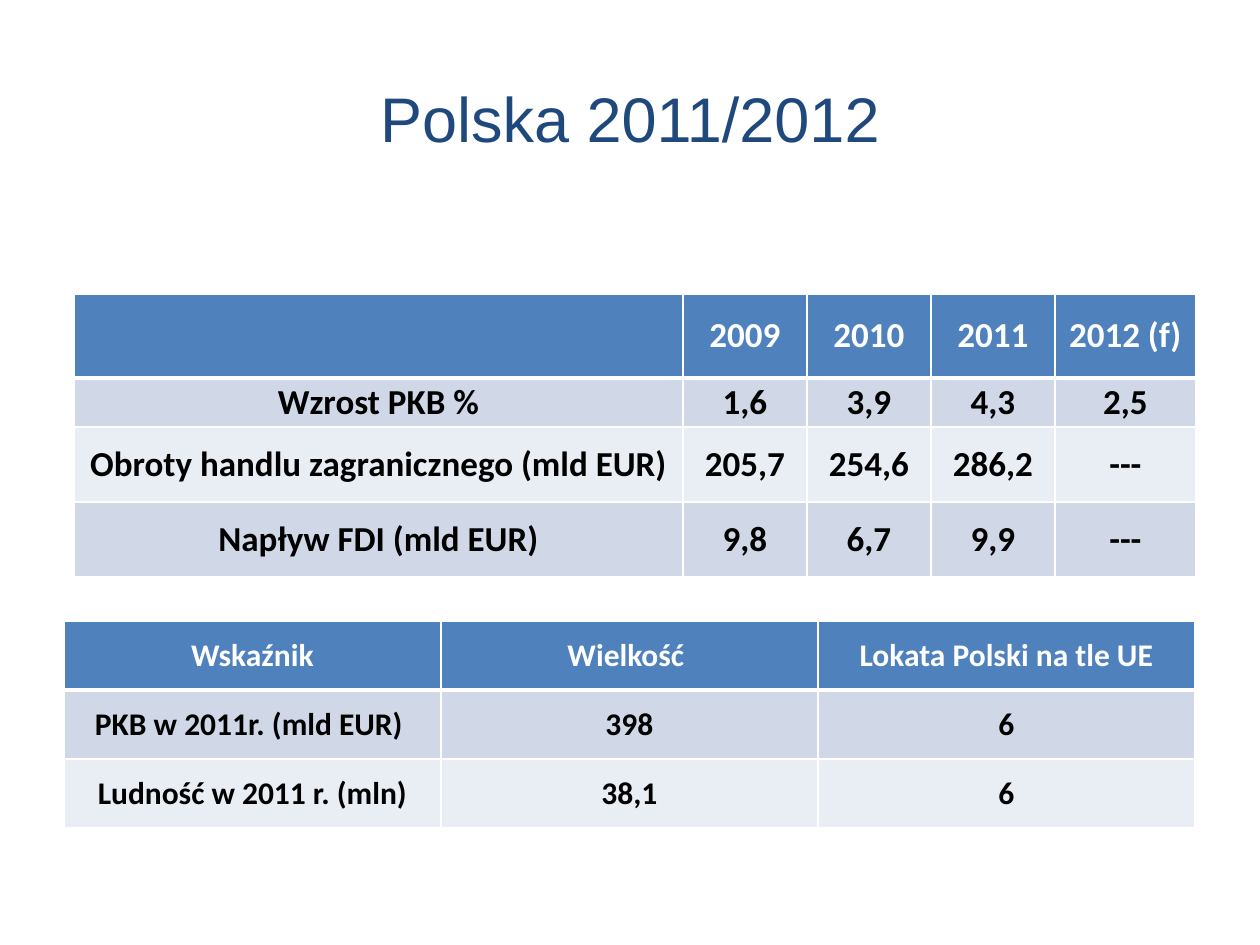
from dataclasses import dataclass

from lxml.etree import SubElement
from pptx import Presentation
from pptx.dml.color import RGBColor
from pptx.enum.text import MSO_ANCHOR, PP_ALIGN
from pptx.oxml.ns import qn
from pptx.util import Pt

EMU_PER_PX = 914400 / 126


@dataclass(frozen=True)
class Theme:
    title_font: str = "Arial"
    table_font: str = "Calibri"
    title_color: str = "1F497D"
    header_fill: str = "4F81BD"
    header_text: str = "FFFFFF"
    body_text: str = "000000"
    bands: tuple = ("D0D8E8", "E9EDF4")
    border: str = "FFFFFF"
    title_size: int = 36
    yearly_size: int = 20
    ranking_size: int = 18
    thin: int = 1
    thick: int = 3


THEME = Theme()

YEARLY = [
    ["", "2009", "2010", "2011", "2012 (f)"],
    ["Wzrost PKB %", "1,6", "3,9", "4,3", "2,5"],
    ["Obroty handlu zagranicznego (mld EUR)", "205,7", "254,6", "286,2", "---"],
    ["Napływ FDI (mld EUR)", "9,8", "6,7", "9,9", "---"],
]
RANKING = [
    ["Wskaźnik", "Wielkość ", "Lokata Polski na tle UE"],
    ["PKB w 2011r. (mld EUR) ", "398", "6"],
    ["Ludność w 2011 r. (mln)", "38,1", "6"],
]


def px(n):
    return round(n * EMU_PER_PX)


def write_text(tf, text, color, **font):
    """Put one centred run into a text frame."""
    p = tf.paragraphs[0]
    p.alignment = PP_ALIGN.CENTER
    r = p.add_run()
    r.text = text
    r.font.color.rgb = RGBColor.from_string(color)
    for name, value in font.items():
        setattr(r.font, name, value)


def add_title(slide, text, box):
    tf = slide.shapes.add_textbox(*map(px, box)).text_frame
    tf.word_wrap = True
    tf.vertical_anchor = MSO_ANCHOR.MIDDLE
    write_text(tf, text, THEME.title_color,
               name=THEME.title_font, size=Pt(THEME.title_size))


def set_borders(cell, widths):
    """Draw the cell sides; must run before the fill, which follows them in the XML."""
    tcPr = cell._tc.get_or_add_tcPr()
    for side, width in widths.items():
        ln = SubElement(tcPr, qn(f"a:ln{side}"), w=str(Pt(width)))
        fill = SubElement(ln, qn("a:solidFill"))
        SubElement(fill, qn("a:srgbClr"), val=THEME.border)


def format_cell(cell, text, row, size, inset):
    is_header = row == 0
    set_borders(cell, {
        "L": THEME.thin,
        "R": THEME.thin,
        "T": THEME.thick if row == 1 else THEME.thin,
        "B": THEME.thick if is_header else THEME.thin,
    })
    fill = THEME.header_fill if is_header else THEME.bands[(row - 1) % 2]
    cell.fill.solid()
    cell.fill.fore_color.rgb = RGBColor.from_string(fill)
    layout = dict(vertical_anchor=MSO_ANCHOR.MIDDLE, margin_left=px(inset),
                  margin_right=px(inset), margin_top=0, margin_bottom=0)
    for name, value in layout.items():
        setattr(cell, name, value)
    if text:
        write_text(cell.text_frame, text,
                   THEME.header_text if is_header else THEME.body_text,
                   name=THEME.table_font, size=Pt(size), bold=True)


def add_data_table(slide, rows, left, top, widths, heights, size, inset):
    table = slide.shapes.add_table(
        len(rows), len(widths), px(left), px(top),
        px(sum(widths)), px(sum(heights))).table
    table.horz_banding = False
    for column, width in zip(table.columns, widths):
        column.width = px(width)
    for row, height in zip(table.rows, heights):
        row.height = px(height)
    for i, texts in enumerate(rows):
        for j, text in enumerate(texts):
            format_cell(table.cell(i, j), text, i, size, inset)


def main():
    prs = Presentation()
    prs.slide_width, prs.slide_height = px(1260), px(945)
    slide = prs.slides.add_slide(prs.slide_layouts[6])
    add_title(slide, "Polska 2011/2012", (63, 38, 1134, 158))
    add_data_table(slide, YEARLY, 74, 294, [609, 124, 124, 124, 141],
                   [84, 49, 75, 75], THEME.yearly_size, inset=6)
    add_data_table(slide, RANKING, 64, 621, [377] * 3, [69] * 3,
                   THEME.ranking_size, inset=9)
    prs.save("out.pptx")


if __name__ == "__main__":
    main()
